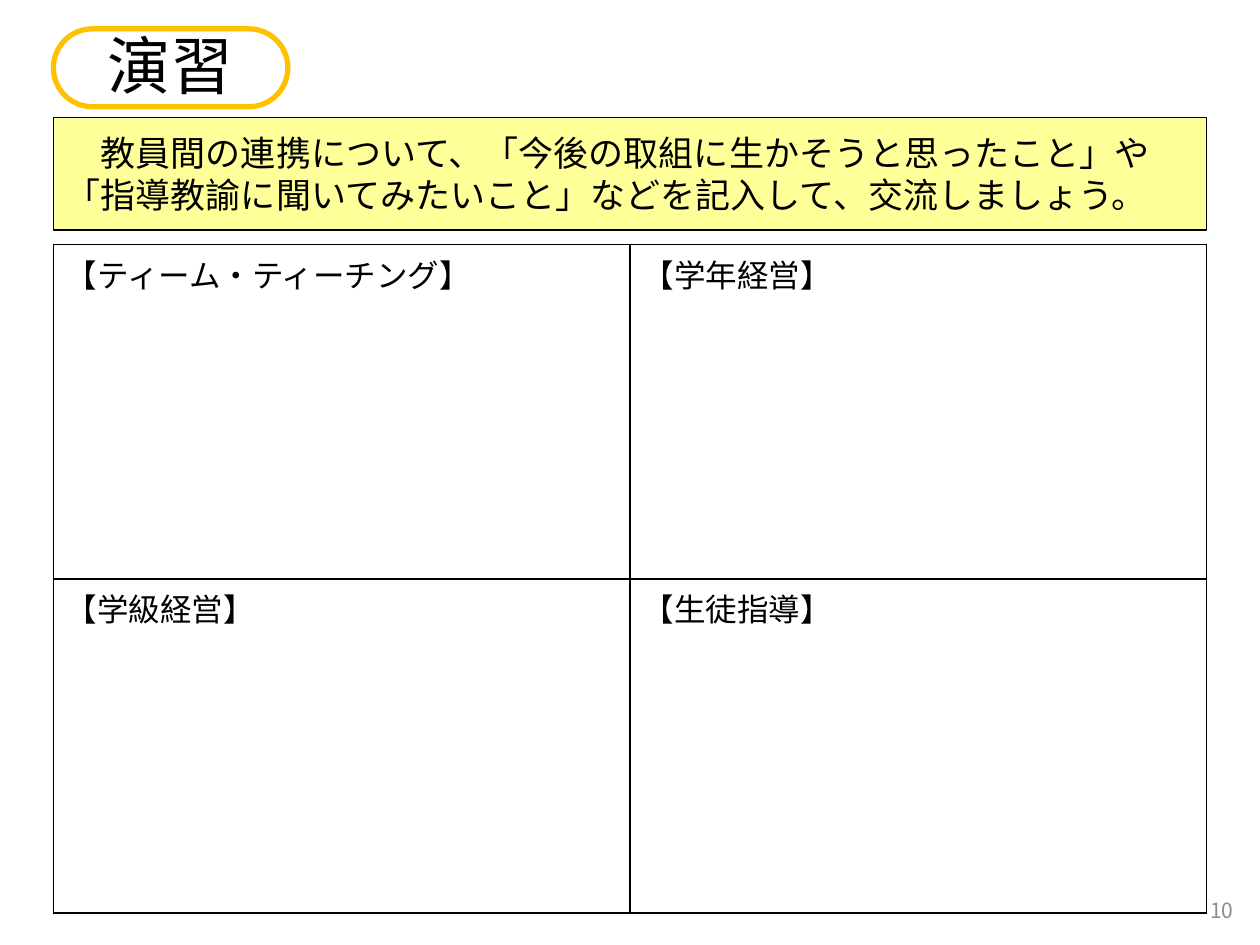
import pptx
import pptx.util
import pptx.dml.color
import pptx.enum.shapes
import pptx.enum.text
import pptx.oxml
import pptx.oxml.ns

Pt = pptx.util.Pt
Shape = pptx.enum.shapes.MSO_SHAPE
Align = pptx.enum.text.PP_ALIGN
Anchor = pptx.enum.text.MSO_ANCHOR
FONT = "Noto Sans CJK JP"
NS = pptx.oxml.ns.nsdecls("a")


def color(code):
    return pptx.dml.color.RGBColor.from_string(code)


def write(frame, text, size, code="000000", align=Align.LEFT):
    para = frame.paragraphs[0]
    para.alignment = align
    run = para.add_run()
    run.text = text
    run.font.size = Pt(size)
    run.font.color.rgb = color(code)
    run.font.name = FONT
    # East Asian text needs its own typeface entry
    run.font._element.append(
        pptx.oxml.parse_xml(f'<a:ea {NS} typeface="{FONT}"/>'))
    return para


def add_box(slide, kind, box, fill, line, width):
    shape = slide.shapes.add_shape(kind, *map(Pt, box))
    shape.shadow.inherit = False
    shape.fill.solid()
    shape.fill.fore_color.rgb = color(fill)
    shape.line.color.rgb = color(line)
    shape.line.width = Pt(width)
    return shape


def add_title(slide, box, text):
    left, top, width, height = box
    pill = add_box(slide, Shape.ROUNDED_RECTANGLE, box, "FFFFFF", "FFC000", 3)
    pill.adjustments[0] = 0.5
    title = slide.shapes.title
    title.left, title.top = Pt(left + 23.5), Pt(top - 5)
    title.width, title.height = Pt(width - 47), Pt(height + 6.5)
    # The title text lies in front of its pill
    title.element.addprevious(pill.element)
    frame = title.text_frame
    frame.word_wrap = False
    frame.auto_size = pptx.enum.text.MSO_AUTO_SIZE.NONE
    frame.vertical_anchor = Anchor.TOP
    write(frame, text, 36, align=Align.CENTER)


def add_task(slide, box, text):
    task = add_box(slide, Shape.RECTANGLE, box, "FFFF99", "000000", 0.75)
    frame = task.text_frame
    frame.word_wrap = True
    frame.vertical_anchor = Anchor.MIDDLE
    write(frame, text, 20).space_before = Pt(5.8)


def add_border(cell, code, width):
    props = cell._tc.get_or_add_tcPr()
    for spot, side in enumerate(("lnL", "lnR", "lnT", "lnB")):
        props.insert(spot, pptx.oxml.parse_xml(
            f'<a:{side} {NS} w="{Pt(width)}"><a:solidFill>'
            f'<a:srgbClr val="{code}"/></a:solidFill></a:{side}>'))


def add_grid(slide, box, rows):
    count = len(rows[0])
    table = slide.shapes.add_table(len(rows), count, *map(Pt, box)).table
    table.first_row = table.horz_banding = False
    for col in table.columns:
        col.width = Pt(box[2] / count)
    for row, labels in zip(table.rows, rows):
        row.height = Pt(box[3] / len(rows))
        for cell, label in zip(row.cells, labels):
            cell.fill.background()
            add_border(cell, "000000", 1)
            write(cell.text_frame, label, 18)


def add_number(slide, box, text):
    frame = slide.shapes.add_textbox(*map(Pt, box)).text_frame
    frame.word_wrap = True
    frame.vertical_anchor = Anchor.MIDDLE
    write(frame, text, 12, "8C8C8C", Align.RIGHT)


def main():
    deck = pptx.Presentation()
    deck.slide_width, deck.slide_height = Pt(720), Pt(540)
    slide = deck.slides.add_slide(deck.slide_layouts[5])
    left, width = 30.5, 659

    # Task and answer grid
    add_task(slide, (left, 67, width, 64.5),
             "\u3000教員間の連携について、「今後の取組に生かそうと思ったこと」や"
             "「指導教諭に聞いてみたいこと」などを記入して、交流しましょう。"
             .replace("\u3000", "　"))
    add_grid(slide, (left, 139.75, width, 382),
             [("【ティーム・ティーチング】", "【学年経営】"),
              ("【学級経営】", "【生徒指導】")])

    # Page number and heading
    add_number(slide, (550, 505.5, 162, 28.75), "10")
    add_title(slide, (left, 16.5, 134, 44.5), "演習")
    deck.save("out.pptx")


if __name__ == "__main__":
    main()
